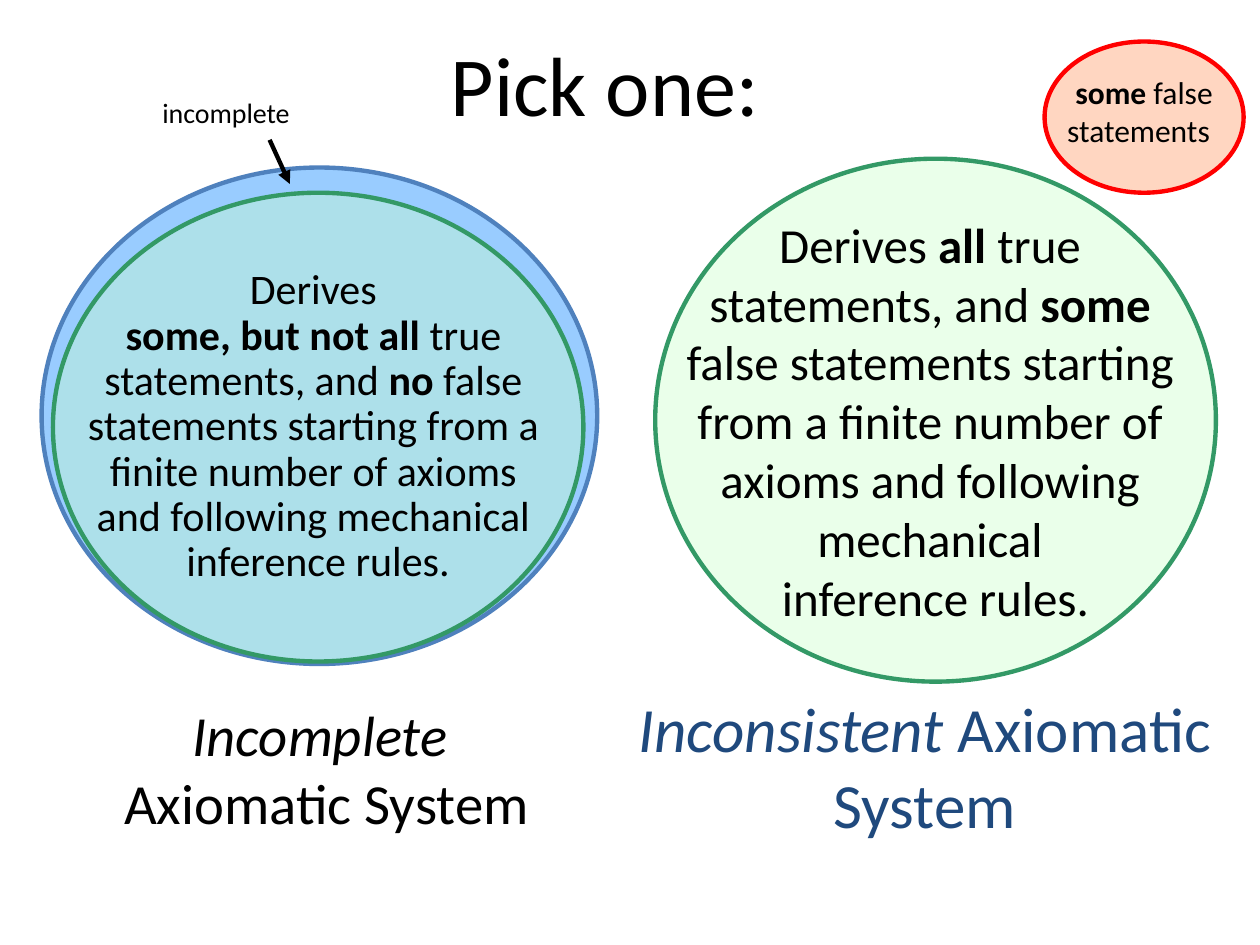
from lxml import etree
from pptx import Presentation
from pptx.dml.color import RGBColor
from pptx.enum.shapes import MSO_CONNECTOR as CONN, MSO_SHAPE as SHAPE
from pptx.enum.text import MSO_ANCHOR as ANCHOR, MSO_AUTO_SIZE as FIT, PP_ALIGN as ALIGN
from pptx.oxml.ns import qn
from pptx.util import Inches, Pt

BLACK, NAVY = "000000", "1F497D"
GREEN, PALE_GREEN = "339966", "CCFFCC"
FONT = "Calibri"


def rgb(value):
    return RGBColor.from_string(value)


def inches(box):
    return [Inches(v) for v in box]


def write_text(tf, paragraphs, size, color=BLACK, align=ALIGN.CENTER, spacing=None):
    """Each paragraph is a list of (text, style, optional size); style is "", "b" or "i"."""
    for i, runs in enumerate(paragraphs):
        p = tf.paragraphs[0] if i == 0 else tf.add_paragraph()
        p.alignment = align
        if spacing:
            p.line_spacing = spacing
        for text, style, *own_size in runs:
            r = p.add_run()
            r.text = text.rstrip("\n")
            font = r.font
            font.name, font.size = FONT, Pt(own_size[0] if own_size else size)
            font.bold, font.italic = style == "b", style == "i"
            font.color.rgb = rgb(color)
            if text.endswith("\n"):
                p.add_line_break()


def add_ellipse(slide, box, fill, line, alpha=None):
    sp = slide.shapes.add_shape(SHAPE.OVAL, *inches(box))
    sp.shadow.inherit = False
    sp.fill.solid()
    sp.fill.fore_color.rgb = rgb(fill)
    if alpha:
        clr = sp.fill._xPr.find(qn("a:solidFill"))[0]
        etree.SubElement(clr, qn("a:alpha"), val=str(alpha * 1000))
    sp.line.color.rgb = rgb(line)
    sp.line.width = Pt(2.5)
    tf = sp.text_frame
    tf.word_wrap = False
    tf.vertical_anchor = ANCHOR.MIDDLE
    return tf


def add_label(slide, box, text, size):
    tf = slide.shapes.add_textbox(*inches(box)).text_frame
    tf.word_wrap = False
    tf.auto_size = FIT.SHAPE_TO_FIT_TEXT
    write_text(tf, [[(text, "")]], size, align=ALIGN.LEFT)


def add_caption(slide, box, runs, size, color):
    tf = slide.shapes.add_textbox(*inches(box)).text_frame
    tf.word_wrap = True
    tf.vertical_anchor = ANCHOR.MIDDLE
    write_text(tf, [runs], size, color)


def add_arrow(slide, start, end):
    s = slide.shapes.add_connector(CONN.STRAIGHT, *inches(start + end))
    s.line.color.rgb = rgb(BLACK)
    s.line.width = Pt(2.5)
    etree.SubElement(s.line._get_or_add_ln(), qn("a:tailEnd"), type="triangle")
    etree.SubElement(s._element.spPr, qn("a:effectLst"))


def incomplete_system(slide, x, y):
    """Derivable statements inside the larger set of true statements."""
    add_caption(slide, (x - 0.15, y + 4.14, 4.82, 1.25),
                [("Incomplete \n", "i"), ("Axiomatic System", "")], 32.4, BLACK)
    add_ellipse(slide, (x, y, 4.41, 3.94), "99CCFF", "4F81BD")
    tf = add_ellipse(slide, (x + 0.09, y + 0.2, 4.21, 3.72), PALE_GREEN, GREEN, 40)
    write_text(tf, [
        [("Derives ", "")],
        [("some, but not all", "b"), (" true ", "")],
        [("statements, and ", ""), ("no", "b"), (" false ", "")],
        [("statements starting from a ", "")],
        [("finite number of axioms ", "")],
        [("and following mechanical ", "")],
        [("inference rules.", "")],
    ], 24, spacing=0.9)
    # Pointer to the underivable rim
    add_arrow(slide, (x + 1.81, y - 0.22), (x + 1.97, y + 0.13))
    add_label(slide, (x + 0.86, y - 0.62, 1.27, 0.37), "incomplete", 16)


def inconsistent_system(slide, x, y):
    """All true statements, plus a small set of false ones."""
    add_caption(slide, (x - 0.4, y + 4.19, 5.08, 1.25),
                [("Inconsistent", "i"), (" Axiomatic System", "")], 36, NAVY)
    tf = add_ellipse(slide, (x, y, 4.45, 4.15), PALE_GREEN, GREEN, 40)
    write_text(tf, [
        [("Derives ", ""), ("all ", "b"), ("true ", "")],
        [("statements, and ", ""), ("some ", "b")],
        [("false statements starting ", "")],
        [("from a finite number of ", "")],
        [("axioms and following ", "")],
        [("mechanical ", "")],
        [("inference rules.", "")],
    ], 28)
    # False statements
    tf = add_ellipse(slide, (x + 3.09, y - 0.93, 1.58, 1.2), "FF9966", "FF0000", 40)
    write_text(tf, [
        [("some", "b"), (" false", "")],
        [("statements", ""), (" ", "", 28)],
    ], 18, spacing=0.7)


def main():
    prs = Presentation()
    prs.slide_width, prs.slide_height = Inches(10), Inches(7.5)
    slide = prs.slides.add_slide(prs.slide_layouts[6])
    incomplete_system(slide, 0.33, 1.33)
    inconsistent_system(slide, 5.2, 1.26)
    add_label(slide, (3.48, 0.21, 2.89, 0.9), "Pick one:", 48)
    prs.save("out.pptx")


if __name__ == "__main__":
    main()
